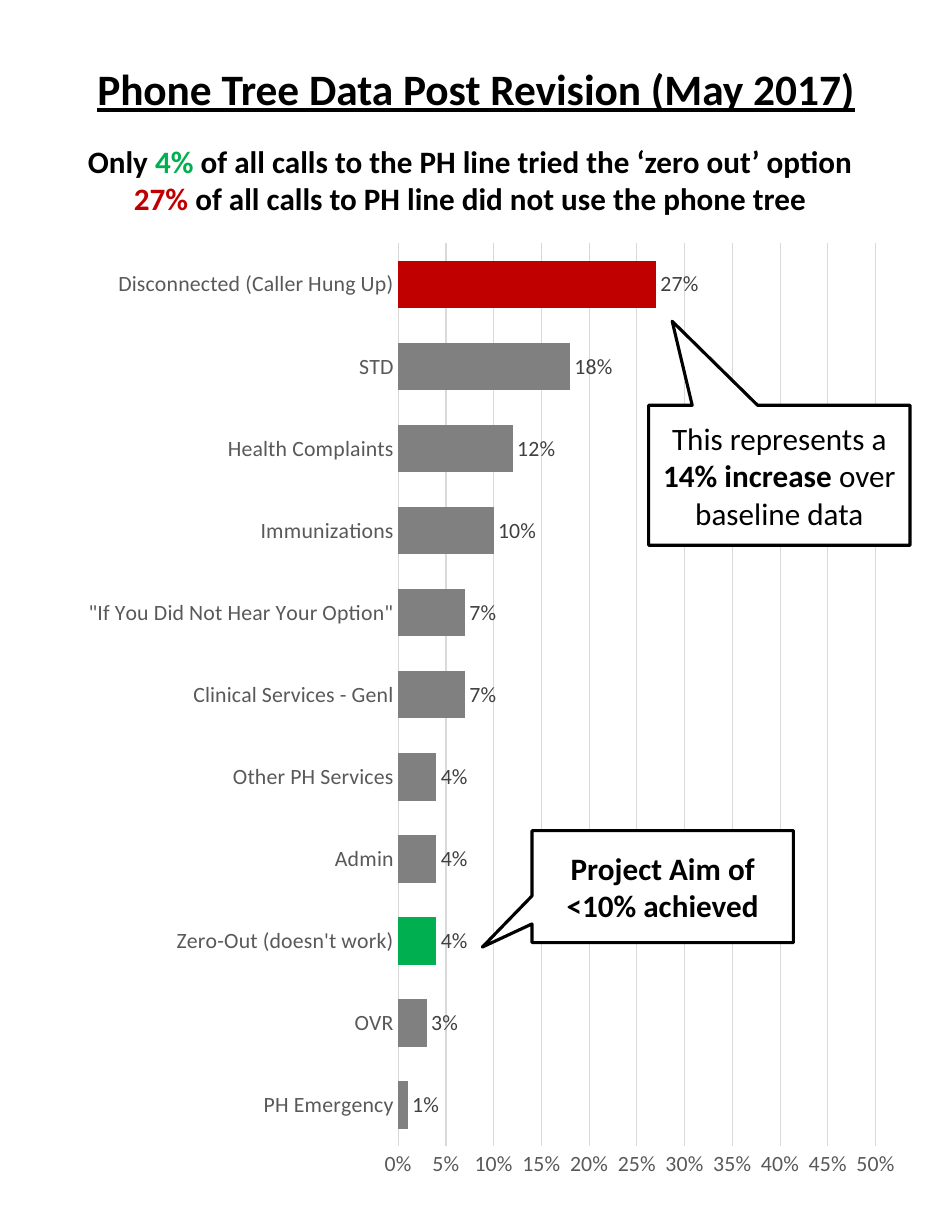
from lxml import etree
from pptx import Presentation
from pptx.chart.data import CategoryChartData
from pptx.dml.color import RGBColor
from pptx.enum.chart import XL_CHART_TYPE, XL_LABEL_POSITION, XL_TICK_MARK
from pptx.enum.shapes import MSO_SHAPE
from pptx.enum.text import MSO_ANCHOR, MSO_AUTO_SIZE, PP_ALIGN
from pptx.oxml.ns import qn
from pptx.util import Pt

BAR = XL_CHART_TYPE.BAR_CLUSTERED
OUTSIDE = XL_LABEL_POSITION.OUTSIDE_END
NO_TICK = XL_TICK_MARK.NONE
CALLOUT = MSO_SHAPE.RECTANGULAR_CALLOUT
TOP, MIDDLE = MSO_ANCHOR.TOP, MSO_ANCHOR.MIDDLE
NO_FIT = MSO_AUTO_SIZE.NONE
CENTER = PP_ALIGN.CENTER

FONT = "Calibri"
BLACK = RGBColor(0x00, 0x00, 0x00)
WHITE = RGBColor(0xFF, 0xFF, 0xFF)
GREEN = RGBColor(0x00, 0xB0, 0x50)
RED = RGBColor(0xC0, 0x00, 0x00)
BAR_GRAY = RGBColor(0x80, 0x80, 0x80)
AXIS_GRAY = RGBColor(0x59, 0x59, 0x59)
LABEL_GRAY = RGBColor(0x40, 0x40, 0x40)
GRID_GRAY = RGBColor(0xD9, 0xD9, 0xD9)

# Share of calls by phone tree option, from bottom to top
CALLS = [
    ("PH Emergency", 0.01),
    ("OVR", 0.03),
    ("Zero-Out (doesn't work)", 0.04),
    ("Admin", 0.04),
    ("Other PH Services", 0.04),
    ("Clinical Services - Genl", 0.07),
    ("\"If You Did Not Hear Your Option\"", 0.07),
    ("Immunizations", 0.10),
    ("Health Complaints", 0.12),
    ("STD", 0.18),
    ("Disconnected (Caller Hung Up)", 0.27),
]
HIGHLIGHTS = {2: GREEN, 10: RED}
PLOT_LAYOUT = {"x": 0.39, "y": 0.02, "w": 0.57, "h": 0.93}


def style_font(font, size, color=BLACK, **extra):
    for name, value in {"name": FONT, "size": Pt(size), **extra}.items():
        setattr(font, name, value)
    font.color.rgb = color


def place(sp, box):
    for name, value in zip(("left", "top", "width", "height"), box):
        setattr(sp, name, Pt(value))


def write(sp, paragraphs, size, anchor=MIDDLE, **extra):
    """Fill a shape with centred paragraphs of (text, format) runs."""
    tf = sp.text_frame
    frame = {"word_wrap": True, "auto_size": NO_FIT, "vertical_anchor": anchor,
             "margin_left": Pt(7.2), "margin_right": Pt(7.2),
             "margin_top": Pt(3.6), "margin_bottom": Pt(3.6)}
    for name, value in frame.items():
        setattr(tf, name, value)
    for i, runs in enumerate(paragraphs):
        p = tf.add_paragraph() if i else tf.paragraphs[0]
        p.alignment, p.space_before, p.line_spacing = CENTER, Pt(0), 1.0
        for text, style in runs:
            r = p.add_run()
            r.text = text
            style_font(r.font, size, **{**extra, **style})


def add_headings(slide, title_box, subtitle_box):
    title, subtitle = slide.placeholders
    place(title, title_box)
    write(title, [[("Phone Tree Data Post Revision (May 2017)", {})]], 27.9,
          bold=True, underline=True)
    place(subtitle, subtitle_box)
    write(subtitle, [
        [("Only ", {}), ("4% ", {"color": GREEN}),
         ("of all calls to the PH line tried the ‘zero out’ option", {})],
        [("27% ", {"color": RED}),
         ("of all calls to PH line did not use the phone tree", {})],
    ], 20, TOP, bold=True)


def fix_plot_area(chart):
    """Pin the inner plot area to fractions of the chart."""
    plot_area = chart.plots[0]._element.getparent()
    for old in plot_area.findall(qn("c:layout")):
        plot_area.remove(old)
    layout = etree.Element(qn("c:layout"))
    manual = etree.SubElement(layout, qn("c:manualLayout"))
    values = {"layoutTarget": "inner", "xMode": "edge", "yMode": "edge", **PLOT_LAYOUT}
    for tag, value in values.items():
        etree.SubElement(manual, qn("c:" + tag)).set("val", str(value))
    plot_area.insert(0, layout)


def add_call_chart(slide, box):
    data = CategoryChartData(number_format="0%")
    data.categories = [name for name, _ in CALLS]
    data.add_series("Series 1", [share for _, share in CALLS])
    chart = slide.shapes.add_chart(BAR, *map(Pt, box), data).chart
    chart.has_legend = chart.has_title = False
    style_font(chart.font, 10)
    fix_plot_area(chart)

    # Bars
    plot = chart.plots[0]
    plot.gap_width, plot.vary_by_categories = 72, False
    series = plot.series[0]
    series.format.fill.solid()
    series.format.fill.fore_color.rgb = BAR_GRAY
    for i, color in HIGHLIGHTS.items():
        fill = series.points[i].format.fill
        fill.solid()
        fill.fore_color.rgb = color

    # Data labels
    plot.has_data_labels = True
    labels = plot.data_labels
    formats = {"show_value": True, "number_format": "0%",
               "number_format_is_linked": False, "position": OUTSIDE}
    for name, value in formats.items():
        setattr(labels, name, value)
    style_font(labels.font, 14, LABEL_GRAY)

    # Axes and gridlines
    categories, shares = chart.category_axis, chart.value_axis
    for axis in (categories, shares):
        axis.major_tick_mark = axis.minor_tick_mark = NO_TICK
        style_font(axis.tick_labels.font, 14, AXIS_GRAY)
    shares.minimum_scale, shares.maximum_scale, shares.major_unit = 0, 0.5, 0.05
    shares.tick_labels.number_format = "0%"
    shares.tick_labels.number_format_is_linked = False
    shares.has_major_gridlines = True
    shares.format.line.fill.background()
    for line in (categories.format.line, shares.major_gridlines.format.line):
        line.color.rgb = GRID_GRAY
        line.width = Pt(0.75)


def add_callout(slide, box, tip, runs):
    sp = slide.shapes.add_shape(CALLOUT, *map(Pt, box))
    sp.shadow.inherit = False
    for i, value in enumerate(tip):
        sp.adjustments[i] = value
    sp.fill.solid()
    sp.fill.fore_color.rgb = WHITE
    sp.line.color.rgb = BLACK
    sp.line.width = Pt(2)
    write(sp, [runs], 20)


def main():
    prs = Presentation()
    prs.slide_width, prs.slide_height = Pt(612), Pt(792)
    slide = prs.slides.add_slide(prs.slide_layouts[0])
    add_headings(slide, (46, 17, 520, 79), (20, 88, 564.5, 80.5))
    add_call_chart(slide, (46, 144, 538.5, 624))
    add_callout(slide, (417, 260.5, 168, 90), (-0.41, -1.1),
                [("This represents a ", {}), ("14% increase ", {"bold": True}),
                 ("over baseline data", {})])
    add_callout(slide, (342, 534, 168, 72), (-0.69, 0.54),
                [("Project Aim of <10% achieved", {"bold": True})])
    prs.save("out.pptx")


if __name__ == "__main__":
    main()
